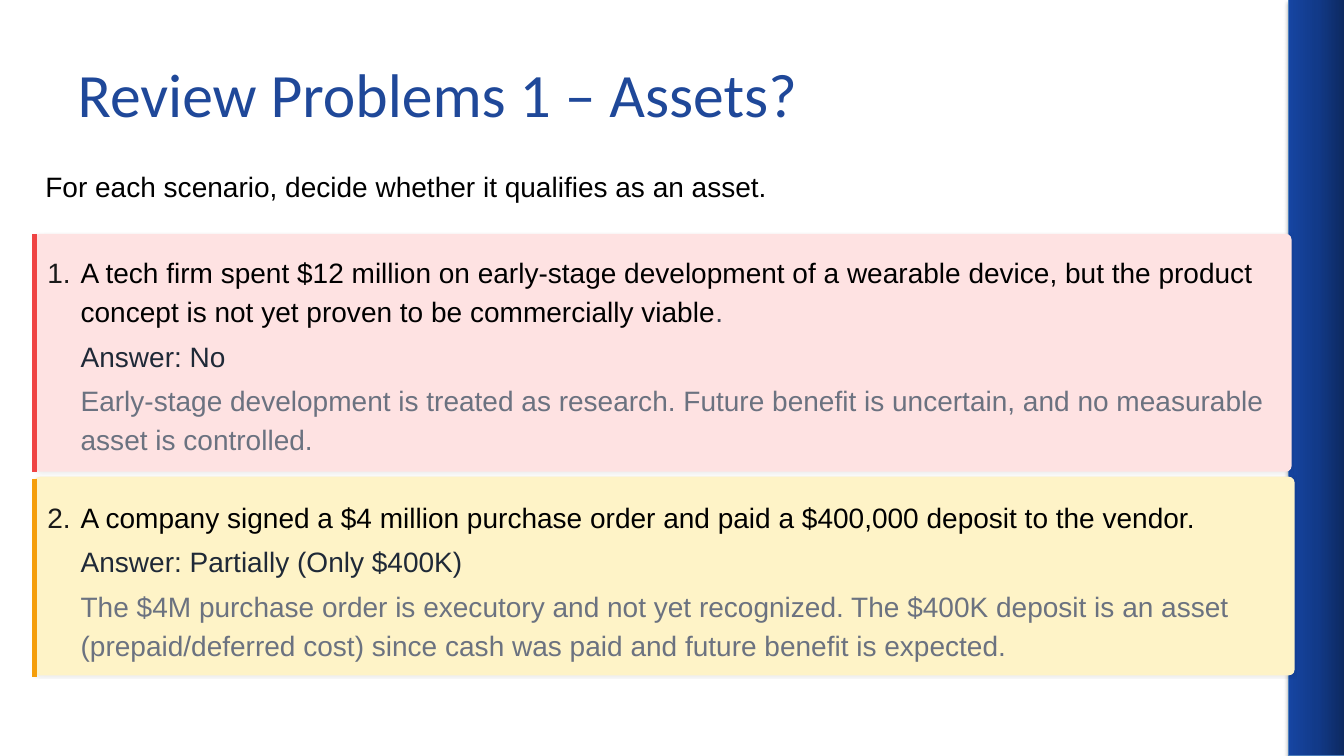
from copy import deepcopy
from typing import NamedTuple

from lxml.etree import SubElement
from pptx import Presentation
from pptx.dml.color import RGBColor
from pptx.enum.shapes import MSO_CONNECTOR, MSO_SHAPE
from pptx.enum.text import MSO_ANCHOR, MSO_AUTO_SIZE, PP_ALIGN
from pptx.oxml.ns import qn
from pptx.util import Pt

EMU_PER_PX = 9144
PAGE_WIDTH, PAGE_HEIGHT = 1333, 750
LINE_HEIGHT = 39
ENTRY_GAP = 5
CARD_LEFT = 34
CARD_PADDING = 16
CORNER_RADIUS = 5.6

COLORS = {
    "title": "1F4899",
    "black": "000000",
    "number": "1A1A1A",
    "period": "374151",
    "answer": "1F2937",
    "reason": "6B7280",
    "red": "EF4444",
    "red_tint": "FEE2E2",
    "amber": "F59E0B",
    "amber_tint": "FEF3C7",
    "band_dark": "0D2960",
    "band_middle": "123A89",
    "band_light": "1645A2",
    "band_line": "4B7EBC",
}


class Span(NamedTuple):
    text: str
    color: str


class Entry(NamedTuple):
    lines: int
    spans: list[Span]


class Problem(NamedTuple):
    number: str
    top: int
    width: int
    height: int
    accent_top: int
    accent: str
    tint: str
    entries: list[Entry]


PROBLEMS = [
    Problem("1.", 232, 1247, 236, 232, "red", "red_tint", [
        Entry(2, [
            Span("A tech firm spent $12 million on early-stage development of a wearable device, "
                 "but the product concept is not yet proven to be commercially viable", "black"),
            Span(".", "period"),
        ]),
        Entry(1, [Span("Answer: No", "answer")]),
        Entry(2, [Span("Early-stage development is treated as research. Future benefit is "
                       "uncertain, and no measurable asset is controlled.", "reason")]),
    ]),
    Problem("2.", 473, 1250, 197, 475, "amber", "amber_tint", [
        Entry(1, [Span("A company signed a $4 million purchase order and paid a $400,000 "
                       "deposit to the vendor.", "black")]),
        Entry(1, [Span("Answer: Partially (Only $400K)", "answer")]),
        Entry(2, [Span("The $4M purchase order is executory and not yet recognized. The $400K "
                       "deposit is an asset (prepaid/deferred cost) since cash was paid and "
                       "future benefit is expected.", "reason")]),
    ]),
]


def px(length: int) -> int:
    return length * EMU_PER_PX


def rgb(name: str) -> RGBColor:
    return RGBColor.from_string(COLORS[name])


def add_span(para, text: str, *, font: str, size: int, color: str) -> None:
    span = para.add_run()
    span.text = text
    span.font.name = font
    span.font.size = Pt(size)
    span.font.color.rgb = rgb(color)


def add_text(page, left: int, top: int, width: int, entry: Entry, *, wrap: bool = True) -> None:
    box = page.shapes.add_textbox(px(left), px(top), px(width), px(entry.lines * LINE_HEIGHT))
    frame = box.text_frame
    frame.word_wrap = wrap
    frame.margin_left = frame.margin_top = frame.margin_right = frame.margin_bottom = 0
    para = frame.paragraphs[0]
    para.line_spacing = Pt(28)
    para.space_after = Pt(4)
    for text, color in entry.spans:
        add_span(para, text, font="Arial", size=20, color=color)


def add_shadow(shape, *, opacity: int, blur: float, distance: float) -> None:
    shape.shadow.inherit = False
    effects = shape.element.spPr.find(qn("a:effectLst"))
    shadow = SubElement(effects, qn("a:outerShdw"), blurRad=str(Pt(blur)),
                        dist=str(Pt(distance)), dir="5400000", algn="ctr", rotWithShape="0")
    color = SubElement(shadow, qn("a:srgbClr"), val=COLORS["black"])
    SubElement(color, qn("a:alpha"), val=str(opacity * 1000))


def add_band(page) -> None:
    band = page.shapes.add_shape(MSO_SHAPE.RECTANGLE, px(1278), 0, px(56), px(PAGE_HEIGHT))
    band.fill.gradient()
    band.fill.gradient_angle = 180
    stop_list = band.element.spPr.find(".//" + qn("a:gsLst"))
    stop_list.insert(1, deepcopy(stop_list[0]))
    names = ("band_dark", "band_middle", "band_light")
    for index, (stop, name) in enumerate(zip(band.fill.gradient_stops, names)):
        stop.position = index / 2
        stop.color.rgb = rgb(name)
    band.line.color.rgb = rgb("band_line")
    band.line.width = Pt(0.75)
    add_shadow(band, opacity=35, blur=3.1, distance=1.8)


def add_title(page, text: str) -> None:
    title = page.shapes.title
    title.left, title.top, title.width, title.height = px(67), px(30), px(1200), px(125)
    frame = title.text_frame
    frame.auto_size = MSO_AUTO_SIZE.NONE
    frame.vertical_anchor = MSO_ANCHOR.MIDDLE
    para = frame.paragraphs[0]
    para.alignment = PP_ALIGN.LEFT
    add_span(para, text, font="Calibri", size=44, color="title")


def add_problem(page, problem: Problem) -> None:
    card = page.shapes.add_shape(MSO_SHAPE.ROUNDED_RECTANGLE, px(CARD_LEFT), px(problem.top),
                                 px(problem.width), px(problem.height))
    card.adjustments[0] = CORNER_RADIUS / problem.height
    card.fill.solid()
    card.fill.fore_color.rgb = rgb(problem.tint)
    card.line.fill.background()
    add_shadow(card, opacity=8, blur=1.5, distance=0.8)

    accent = page.shapes.add_connector(
        MSO_CONNECTOR.STRAIGHT, px(CARD_LEFT), px(problem.accent_top),
        px(CARD_LEFT), px(problem.accent_top + problem.height))
    accent.line.color.rgb = rgb(problem.accent)
    accent.line.width = Pt(3.75)
    SubElement(accent.element.spPr, qn("a:effectLst"))

    top = problem.accent_top + CARD_PADDING
    add_text(page, 47, top, 24, Entry(1, [Span(problem.number, "number")]), wrap=False)
    for entry in problem.entries:
        add_text(page, 80, top, 1214, entry)
        top += entry.lines * LINE_HEIGHT + ENTRY_GAP


def main() -> None:
    deck = Presentation()
    deck.slide_width, deck.slide_height = px(PAGE_WIDTH), px(PAGE_HEIGHT)
    page = deck.slides.add_slide(deck.slide_layouts.get_by_name("Title Only"))
    add_band(page)
    add_title(page, "Review Problems 1 – Assets?")
    for problem in PROBLEMS:
        add_problem(page, problem)
    prompt = Span("For each scenario, decide whether it qualifies as an asset.", "black")
    add_text(page, 45, 163, 1020, Entry(1, [prompt]))
    deck.save("out.pptx")


if __name__ == "__main__":
    main()
